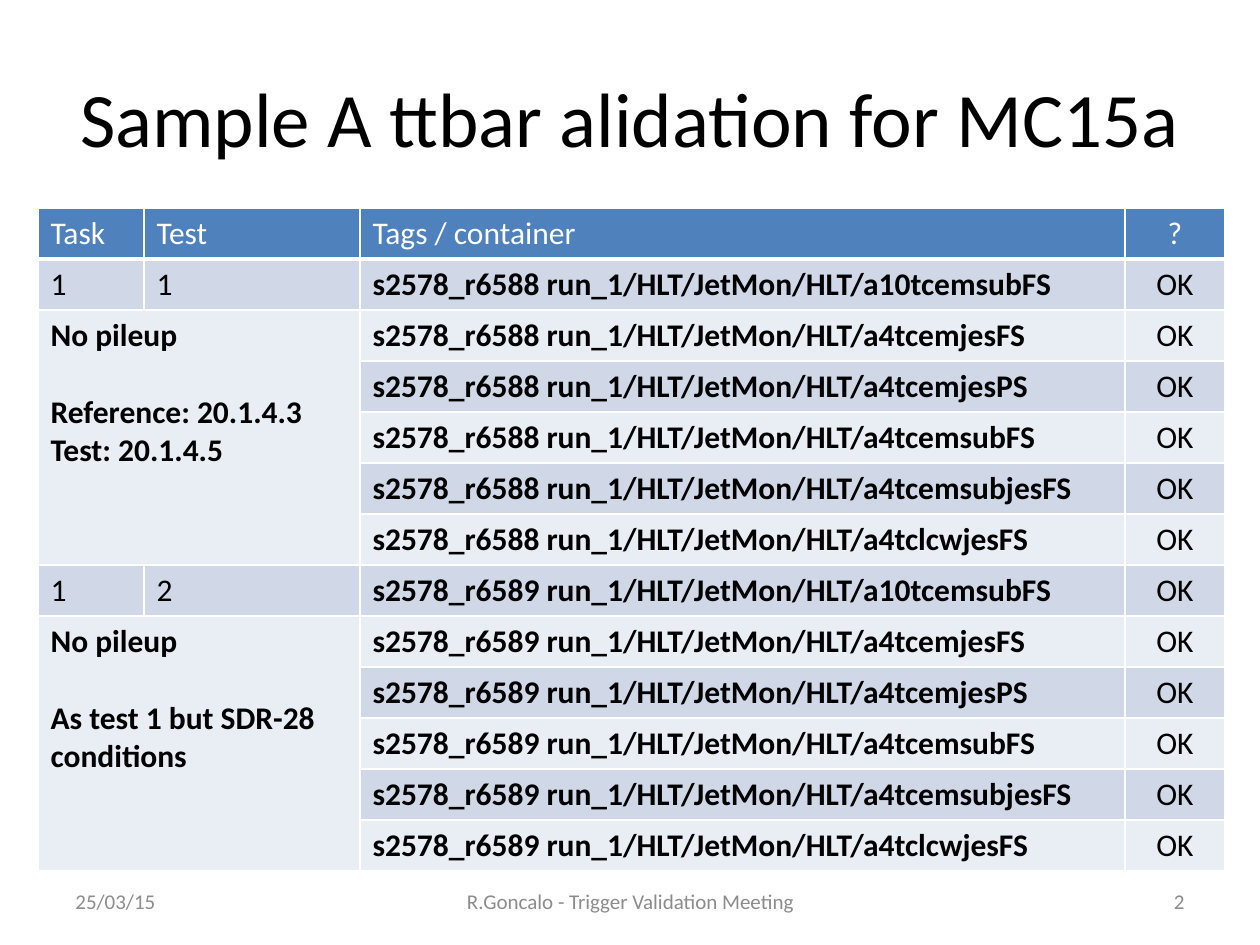
"""Build the jet trigger validation slide with its results table."""
import pptx
import pptx.dml.color
import pptx.enum.text
import pptx.oxml
import pptx.oxml.ns
import pptx.util

RGB = pptx.dml.color.RGBColor
ALIGN = pptx.enum.text.PP_ALIGN
ANCHOR = pptx.enum.text.MSO_ANCHOR
BLACK = RGB(0x00, 0x00, 0x00)
WHITE = RGB(0xFF, 0xFF, 0xFF)
GREY = RGB(0x8C, 0x8C, 0x8C)
BLUE = RGB(0x4F, 0x81, 0xBD)
BANDS = [RGB(0xE9, 0xED, 0xF4), RGB(0xD0, 0xD8, 0xE8)]

TITLE = "Sample A ttbar alidation for MC15a"
HEAD = ["Task", "Test", "Tags / container", "?"]
CHAINS = ["a10tcemsubFS", "a4tcemjesFS", "a4tcemjesPS",
          "a4tcemsubFS", "a4tcemsubjesFS", "a4tclcwjesFS"]
TESTS = [
    ("1", "1", "s2578_r6588", ["No pileup", "Reference: 20.1.4.3 Test: 20.1.4.5"]),
    ("1", "2", "s2578_r6589", ["No pileup", "As test 1 but SDR-28 conditions"]),
]
FOOT = [
    ("25/03/15", 63, 294, ALIGN.LEFT),
    ("R.Goncalo - Trigger Validation Meeting", 431, 399, ALIGN.CENTER),
    ("2", 903, 294, ALIGN.RIGHT),
]
COLS = [106, 216, 765, 100]
ROW = 51
LEFT, TOP = 38, 208


def px(num):
    return pptx.util.Emu(round(num * 914400 / 126))


def write(frame, *lines, size=18, color=BLACK, bold=False, align=ALIGN.LEFT, gap=0):
    for i, line in enumerate(lines):
        para = frame.add_paragraph() if i else frame.paragraphs[0]
        para.alignment = align
        if i < len(lines) - 1:
            para.space_after = pptx.util.Pt(gap)
        run = para.add_run()
        run.text = line
        font = run.font
        font.name = "Calibri"
        font.size = pptx.util.Pt(size)
        font.bold = bold
        font.color.rgb = color


def label(slide, text, x, y, wide, high, **style):
    frame = slide.shapes.add_textbox(px(x), px(y), px(wide), px(high)).text_frame
    frame.word_wrap = True
    frame.vertical_anchor = ANCHOR.MIDDLE
    write(frame, text, **style)


def paint(cell, fill, base):
    props = cell._tc.get_or_add_tcPr()
    for side, width in (("L", 1), ("R", 1), ("T", 1), ("B", base)):
        props.append(pptx.oxml.parse_xml(
            f'<a:ln{side} {pptx.oxml.ns.nsdecls("a")} w="{pptx.util.Pt(width)}">'
            f'<a:solidFill><a:srgbClr val="{WHITE}"/></a:solidFill></a:ln{side}>'))
    cell.fill.solid()
    cell.fill.fore_color.rgb = fill


def build(slide):
    count = 1 + len(TESTS) * len(CHAINS)
    table = slide.shapes.add_table(count, len(COLS), px(LEFT), px(TOP),
                                   px(sum(COLS)), px(ROW * count)).table
    for col, wide in zip(table.columns, COLS):
        col.width = px(wide)
    for r, row in enumerate(table.rows):
        row.height = px(ROW)
        for cell in row.cells:
            paint(cell, BANDS[r % 2] if r else BLUE, 1 if r else 3)

    def put(r, c, *lines, **style):
        align = ALIGN.CENTER if c == 3 else ALIGN.LEFT
        write(table.cell(r, c).text_frame, *lines, align=align, **style)

    for c, text in enumerate(HEAD):
        put(0, c, text, color=WHITE)
    for t, (task, test, tag, notes) in enumerate(TESTS):
        first = 1 + t * len(CHAINS)
        last = first + len(CHAINS) - 1
        put(first, 0, task)
        put(first, 1, test)
        table.cell(first + 1, 0).merge(table.cell(last, 1))
        put(first + 1, 0, *notes, bold=True, gap=22)
        for r, chain in enumerate(CHAINS, first):
            put(r, 2, f"{tag} run_1/HLT/JetMon/HLT/{chain}", bold=True)
            put(r, 3, "OK")


def main():
    deck = pptx.Presentation()
    deck.slide_width, deck.slide_height = px(1260), px(945)
    slide = deck.slides.add_slide(deck.slide_layouts[6])
    label(slide, TITLE, 63, 38, 1134, 158, size=44, align=ALIGN.CENTER)
    build(slide)
    for text, x, wide, align in FOOT:
        label(slide, text, x, 876, wide, 50, size=12, color=GREY, align=align)
    deck.save("out.pptx")


if __name__ == "__main__":
    main()
